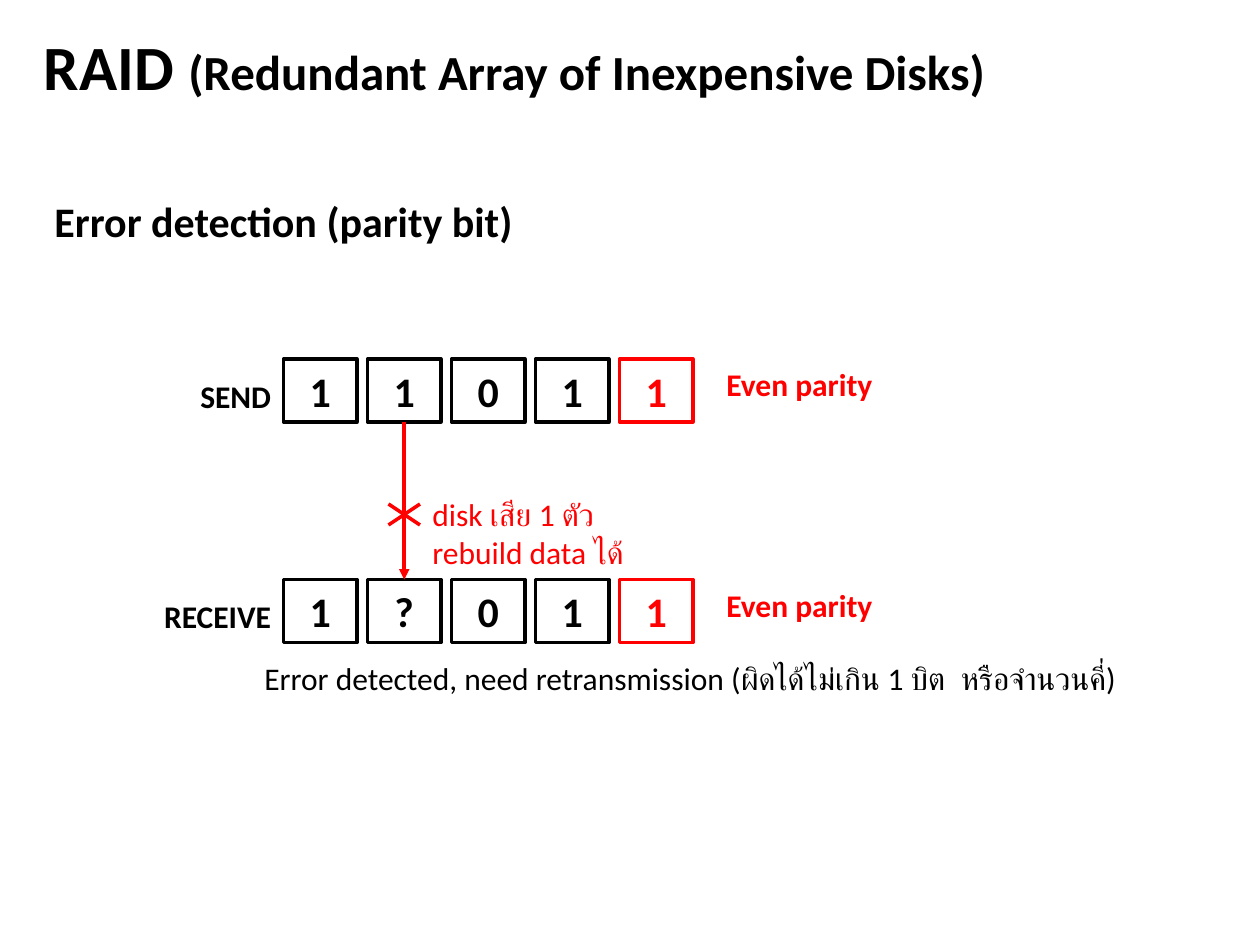
"""Build a slide that explains RAID error detection with an even parity bit."""
from pptx import Presentation
from pptx.dml.color import RGBColor
from pptx.enum.shapes import MSO_CONNECTOR, MSO_SHAPE
from pptx.enum.text import MSO_ANCHOR, PP_ALIGN
from pptx.oxml.ns import qn
from pptx.util import Pt
from lxml.etree import SubElement

BLACK = RGBColor(0x00, 0x00, 0x00)
RED = RGBColor(0xFF, 0x00, 0x00)
FONT = "Calibri"

CELL_LEFT, CELL_WIDTH, CELL_HEIGHT, CELL_PITCH = 162, 42, 36, 48
SEND_TOP, RECEIVE_TOP = 205.2, 331.2
FAULTY_BIT = 1


def format_runs(paragraph, size, color=BLACK, bold=True):
    values = {"name": FONT, "size": Pt(size), "bold": bold}
    for run in paragraph.runs:
        for name, value in values.items():
            setattr(run.font, name, value)
        run.font.color.rgb = color


def add_text(slide, box, text, size, color=BLACK, bold=True, align=PP_ALIGN.LEFT):
    shape = slide.shapes.add_textbox(*map(Pt, box))
    shape.text_frame.word_wrap = True
    paragraph = shape.text_frame.paragraphs[0]
    paragraph.text = text
    paragraph.alignment = align
    format_runs(paragraph, size, color, bold)
    return paragraph


def add_cell(slide, left, top, bit, color):
    shape = slide.shapes.add_shape(
        MSO_SHAPE.RECTANGLE, Pt(left), Pt(top), Pt(CELL_WIDTH), Pt(CELL_HEIGHT))
    shape.shadow.inherit = False
    shape.fill.background()
    shape.line.color.rgb = color
    shape.line.width = Pt(2)
    shape.text_frame.vertical_anchor = MSO_ANCHOR.MIDDLE
    paragraph = shape.text_frame.paragraphs[0]
    paragraph.text = bit
    paragraph.alignment = PP_ALIGN.CENTER
    format_runs(paragraph, 24, color)
    return shape


def add_bit_row(slide, label, top, bits):
    cells = []
    for index, bit in enumerate(bits):
        color = RED if index == len(bits) - 1 else BLACK
        cells.append(add_cell(slide, CELL_LEFT + index * CELL_PITCH, top, bit, color))
    add_text(slide, (54, top + 6.5, 108, 29), label, 18, align=PP_ALIGN.RIGHT)
    add_text(slide, (408, top, 150, 29), "Even parity", 18, RED)
    return cells


def add_line(slide, start_x, start_y, end_x, end_y):
    connector = slide.shapes.add_connector(
        MSO_CONNECTOR.STRAIGHT, Pt(start_x), Pt(start_y), Pt(end_x), Pt(end_y))
    connector.line.color.rgb = RED
    connector.line.width = Pt(2)
    SubElement(connector._element.spPr, qn("a:effectLst"))
    return connector


def add_fault_arrow(slide, sent, received):
    center = CELL_LEFT + FAULTY_BIT * CELL_PITCH + CELL_WIDTH / 2
    arrow = add_line(slide, center, SEND_TOP + CELL_HEIGHT, center, RECEIVE_TOP)
    arrow.begin_connect(sent, 0 + 2)
    arrow.end_connect(received, 0)
    SubElement(arrow.line._get_or_add_ln(), qn("a:tailEnd"), type="triangle")
    for start_y, end_y in ((300, 288), (288, 300)):
        add_line(slide, center - 9, start_y, center + 9, end_y)


def main():
    presentation = Presentation()
    presentation.slide_width, presentation.slide_height = Pt(720), Pt(540)
    slide = presentation.slides.add_slide(presentation.slide_layouts[6])

    title = add_text(slide, (18, 12, 684, 51), "RAID ", 36)
    title.add_run().text = "(Redundant Array of Inexpensive Disks)"
    format_runs(title, 28)
    title.runs[0].font.size = Pt(36)
    add_text(slide, (24, 108, 672, 36), "Error detection (parity bit)", 24)

    sent = add_bit_row(slide, "SEND", SEND_TOP, "11011")
    received = add_bit_row(slide, "RECEIVE", RECEIVE_TOP, "1?011")
    add_fault_arrow(slide, sent[FAULTY_BIT], received[FAULTY_BIT])

    add_text(slide, (144, 373, 570, 29),
             "Error detected, need retransmission (ผิดได้ไม่เกิน 1 บิต  หรือจำนวนคี่)",
             18, bold=False)
    add_text(slide, (240, 279.4, 150, 51), "disk เสีย 1 ตัว\vrebuild data ได้",
             18, RED, bold=False)
    presentation.save("out.pptx")


if __name__ == "__main__":
    main()
